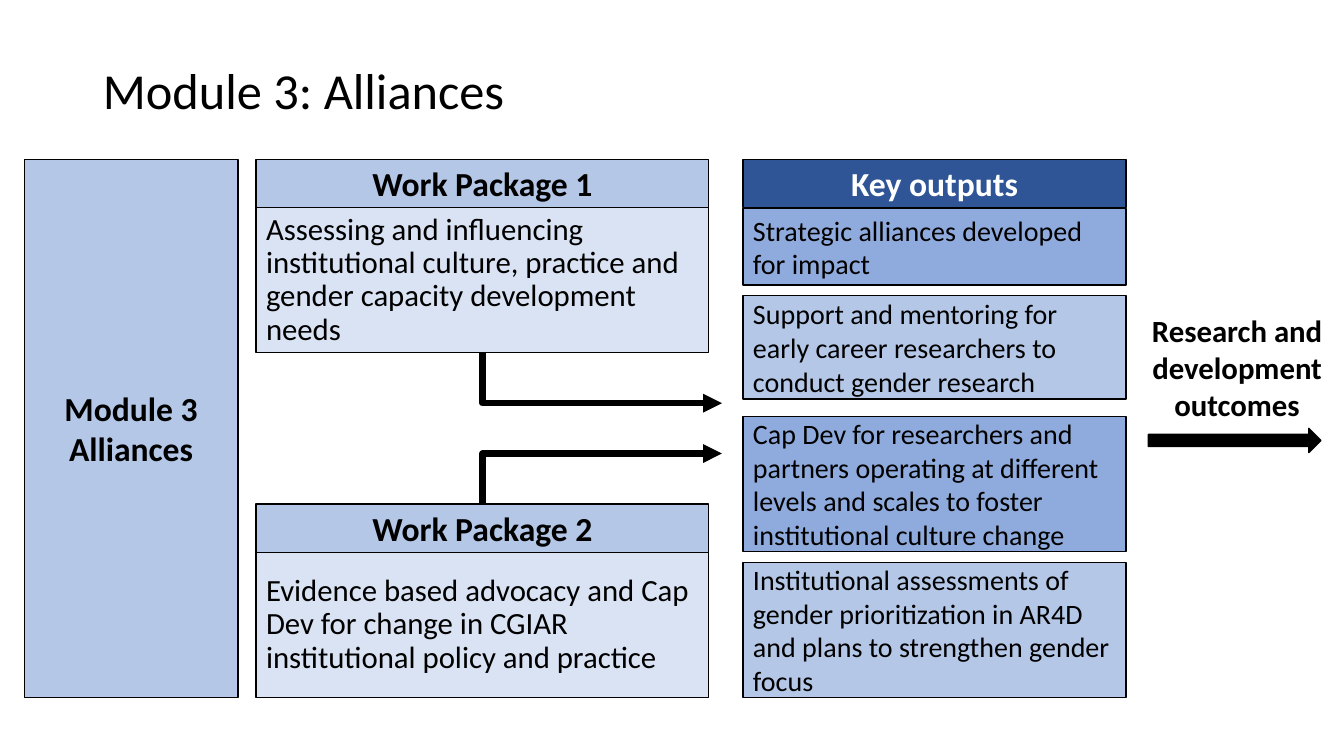
from dataclasses import dataclass

from lxml.etree import SubElement
from pptx import Presentation
from pptx.dml.color import RGBColor
from pptx.enum.shapes import MSO_CONNECTOR, MSO_SHAPE
from pptx.enum.text import MSO_ANCHOR, MSO_AUTO_SIZE, PP_ALIGN
from pptx.oxml.ns import qn
from pptx.util import Inches, Pt


@dataclass(frozen=True)
class Theme:
    font: str = "Calibri"
    black: str = "000000"
    white: str = "FFFFFF"
    navy: str = "2F5597"
    mid: str = "8FAADC"
    light: str = "B4C7E7"
    pale: str = "DAE3F3"
    title: int = 36
    heading: int = 24
    body: int = 22
    output: int = 20


class SlideBuilder:
    def __init__(self, slide, theme):
        self.s = slide
        self.theme = theme

    def set_text(self, tf, text, size, color=None, bold=False, align=PP_ALIGN.LEFT,
                 anchor=MSO_ANCHOR.MIDDLE, spacing=None):
        tf.text = text
        tf.word_wrap = True
        tf.vertical_anchor = anchor
        for p in tf.paragraphs:
            p.alignment = align
            p.line_spacing = spacing
            for r in p.runs:
                r.font.name = self.theme.font
                r.font.size = Pt(size)
                r.font.bold = bold
                r.font.color.rgb = RGBColor.from_string(color or self.theme.black)

    def title(self, text, x, y, w, h):
        sp = self.s.shapes.title
        sp.left, sp.top, sp.width, sp.height = map(Inches, (x, y, w, h))
        self.set_text(sp.text_frame, text, self.theme.title, spacing=0.9)
        sp.text_frame.auto_size = MSO_AUTO_SIZE.NONE

    def shape(self, kind, x, y, w, h, fill):
        sp = self.s.shapes.add_shape(kind, *map(Inches, (x, y, w, h)))
        sp.shadow.inherit = False
        sp.fill.solid()
        sp.fill.fore_color.rgb = RGBColor.from_string(fill)
        sp.line.color.rgb = RGBColor.from_string(self.theme.black)
        sp.line.width = Pt(1)
        return sp

    def box(self, text, x, y, w, h, fill, size, **style):
        sp = self.shape(MSO_SHAPE.RECTANGLE, x, y, w, h, fill)
        self.set_text(sp.text_frame, text, size, **style)

    def heading(self, text, x, y, w, h, fill, color=None):
        self.box(text, x, y, w, h, fill, self.theme.heading, color=color,
                 bold=True, align=PP_ALIGN.CENTER)

    def label(self, text, x, y, w, h):
        tf = self.s.shapes.add_textbox(*map(Inches, (x, y, w, h))).text_frame
        self.set_text(tf, text, self.theme.body, bold=True, align=PP_ALIGN.CENTER,
                      anchor=MSO_ANCHOR.TOP)
        tf.auto_size = MSO_AUTO_SIZE.SHAPE_TO_FIT_TEXT

    def bent_arrow(self, x1, y1, x2, y2):
        """Arrow that leaves (x1, y1) vertically and enters (x2, y2) horizontally."""
        run, rise = x2 - x1, abs(y2 - y1)
        left = (x1 + x2 - rise) / 2
        top = (y1 + y2 - run) / 2
        c = self.s.shapes.add_connector(
            MSO_CONNECTOR.ELBOW, *map(Inches, (left, top, left + rise, top + run)))
        c.line.color.rgb = RGBColor.from_string(self.theme.black)
        c.line.width = Pt(4.5)
        sp_pr = c.element.spPr
        SubElement(sp_pr.find(qn("a:ln")), qn("a:tailEnd"), type="triangle")
        SubElement(sp_pr, qn("a:effectLst"))
        sp_pr.find(qn("a:prstGeom")).set("prst", "bentConnector2")
        xfrm = sp_pr.find(qn("a:xfrm"))
        xfrm.set("flipH", "1")
        if y2 > y1:
            xfrm.set("rot", str(270 * 60000))
        else:
            xfrm.set("rot", str(90 * 60000))
            xfrm.set("flipV", "1")


TOP, HEADER_H, PACKAGE_H = 1.58, 0.48, 1.44
PACKAGE_X, PACKAGE_W = 2.54, 4.49
OUTPUT_X, OUTPUT_W = 7.37, 3.8

PACKAGES = [
    (TOP, "Work Package 1", "Assessing and influencing institutional culture, "
     "practice and gender capacity development needs"),
    (5.0, "Work Package 2", "Evidence based advocacy and Cap Dev for change in "
     "CGIAR institutional policy and practice"),
]
OUTPUTS = [
    (2.07, 0.76, "Strategic alliances developed for impact"),
    (2.93, 1.03, "Support and mentoring for early career researchers to conduct "
     "gender research"),
    (4.13, 1.34, "Cap Dev for researchers and partners operating at different "
     "levels and scales to foster institutional culture change"),
    (5.58, 1.34, "Institutional assessments of gender prioritization in AR4D and "
     "plans to strengthen gender focus"),
]


def main():
    prs = Presentation()
    prs.slide_width, prs.slide_height = Inches(13.33), Inches(7.5)
    t = Theme()
    b = SlideBuilder(prs.slides.add_slide(prs.slide_layouts[5]), t)

    b.title("Module 3: Alliances", 0.92, 0.2, 11.5, 1.45)
    b.heading("Module 3\nAlliances", 0.24, TOP, 2.12, 5.34, t.light)

    for y, name, text in PACKAGES:
        b.heading(name, PACKAGE_X, y, PACKAGE_W, HEADER_H, t.light)
        b.box(text, PACKAGE_X, y + HEADER_H, PACKAGE_W, PACKAGE_H, t.pale, t.body,
              spacing=0.9)

    for i, (y, h, text) in enumerate(OUTPUTS):
        b.box(text, OUTPUT_X, y, OUTPUT_W, h, (t.mid, t.light)[i % 2], t.output)
    b.heading("Key outputs", OUTPUT_X, TOP, OUTPUT_W, HEADER_H, t.navy, t.white)

    b.shape(MSO_SHAPE.RIGHT_ARROW, 11.39, 4.25, 1.71, 0.24, t.black)
    b.label("Research and development outcomes", 11.23, 3.04, 2.08, 1.21)

    middle = PACKAGE_X + PACKAGE_W / 2
    b.bent_arrow(middle, TOP + HEADER_H + PACKAGE_H, 7.16, 4.0)
    b.bent_arrow(middle, PACKAGES[1][0], 7.16, 4.5)

    prs.save("out.pptx")


if __name__ == "__main__":
    main()
